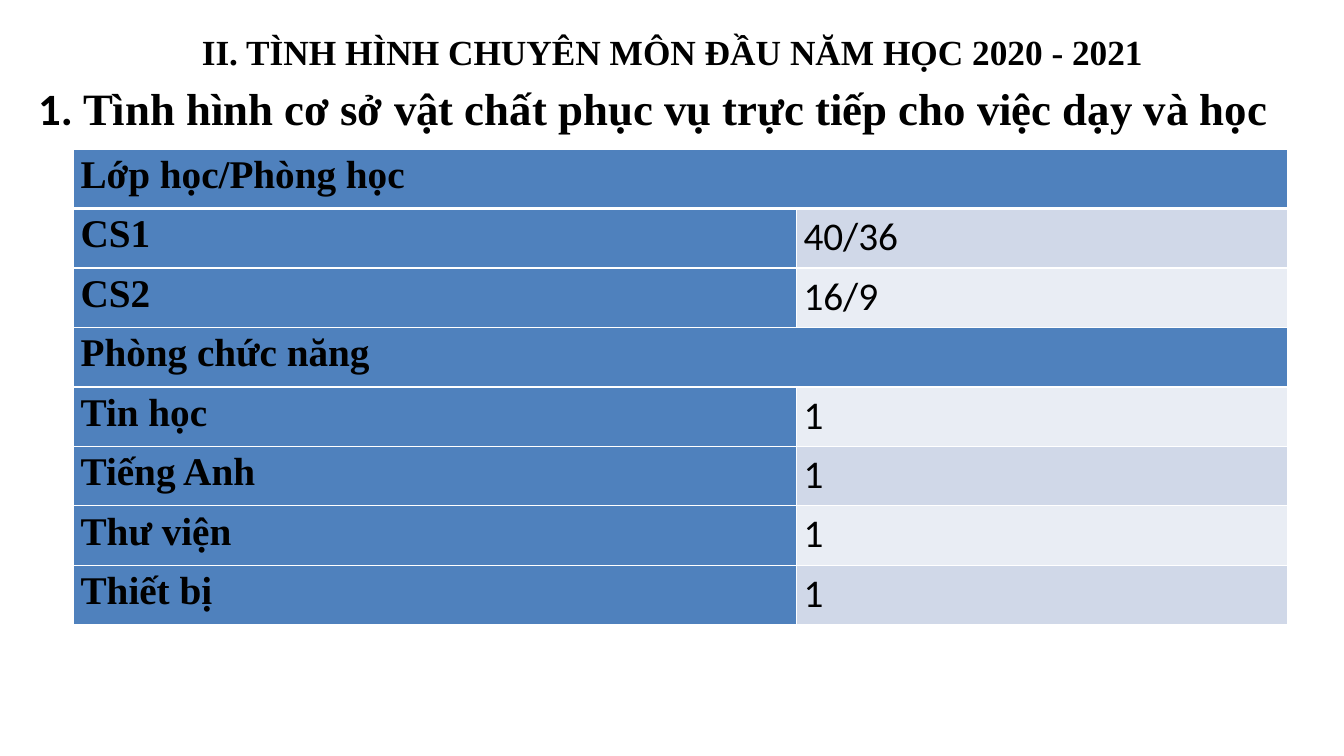
from dataclasses import dataclass

from lxml.etree import SubElement
from pptx import Presentation
from pptx.dml.color import RGBColor as RGB
from pptx.enum.text import MSO_ANCHOR as Anchor, MSO_AUTO_SIZE as Fit, PP_ALIGN as Align
from pptx.oxml.ns import qn
from pptx.util import Emu, Pt

SCALE = 9144  # EMU in one px, at 100 px to the inch


@dataclass(frozen=True)
class Theme:
    ink: str = "000000"
    head: str = "4F81BD"
    dark: str = "D0D8E8"
    light: str = "E9EDF4"
    rule: str = "FFFFFF"
    serif: str = "Times New Roman"
    sans: str = "Calibri"
    title: float = 25.2
    lead: float = 32
    body: float = 28
    thin: float = 1
    thick: float = 3


@dataclass(frozen=True)
class Row:
    """A row with no value spans both columns."""
    label: str
    value: str = ""


THEME = Theme()
ROWS = [
    Row("Lớp học/Phòng học"),
    Row("CS1", "40/36"),
    Row("CS2", "16/9"),
    Row("Phòng chức năng"),
    Row("Tin học", "1"),
    Row("Tiếng Anh", "1"),
    Row("Thư viện", "1"),
    Row("Thiết bị", "1"),
]
WIDTHS = (717, 487)
HEIGHT = 59


def px(count: int) -> Emu:
    return Emu(count * SCALE)


def assign(item, values: dict) -> None:
    for name, value in values.items():
        setattr(item, name, value)


def place(shape, left: int, top: int, width: int, height: int) -> None:
    assign(shape, {"left": px(left), "top": px(top),
                   "width": px(width), "height": px(height)})


def write(para, text: str, size: float, face: str, bold: bool = True) -> None:
    run = para.add_run()
    run.text = text
    assign(run.font, {"size": Pt(size), "name": face, "bold": bold})
    run.font.color.rgb = RGB.from_string(THEME.ink)


def edge(cell, top: float, bottom: float) -> None:
    """Draw the four borders of a cell; top and bottom are in points."""
    props = cell._tc.get_or_add_tcPr()
    sides = {"L": THEME.thin, "R": THEME.thin, "T": top, "B": bottom}
    for side, width in sides.items():
        line = SubElement(props, qn(f"a:ln{side}"), w=str(Pt(width)))
        fill = SubElement(line, qn("a:solidFill"))
        SubElement(fill, qn("a:srgbClr"), val=THEME.rule)


def paint(cell, fill: str, index: int) -> None:
    edge(cell, THEME.thick if index == 1 else THEME.thin,
         THEME.thick if index == 0 else THEME.thin)
    cell.fill.solid()
    cell.fill.fore_color.rgb = RGB.from_string(fill)
    assign(cell, {"margin_left": px(7), "margin_right": px(7),
                  "margin_top": 0, "margin_bottom": 0})


def enter(cell, text: str, face: str, bold: bool) -> None:
    para = cell.text_frame.paragraphs[0]
    assign(para, {"alignment": Align.JUSTIFY, "line_spacing": 1.1,
                  "space_before": Pt(4.8), "space_after": Pt(4.8)})
    write(para, text, THEME.body, face, bold)


def add_title(slide) -> None:
    title = slide.shapes.title
    place(title, 67, 30, 1200, 77)
    frame = title.text_frame
    assign(frame, {"auto_size": Fit.NONE, "word_wrap": True,
                   "vertical_anchor": Anchor.TOP, "margin_top": 0})
    para = frame.paragraphs[0]
    para.alignment = Align.CENTER
    write(para, "II. TÌNH HÌNH CHUYÊN MÔN ĐẦU NĂM HỌC 2020 - 2021",
          THEME.title, THEME.serif)


def add_lead(slide) -> None:
    box = slide.shapes.add_textbox(0, 0, 0, 0)
    place(box, 28, 75, 1282, 595)
    box.text_frame.word_wrap = True
    para = box.text_frame.paragraphs[0]
    write(para, "1. ", THEME.lead, THEME.sans)
    write(para, "Tình hình cơ sở vật chất phục vụ trực tiếp cho việc dạy và học",
          THEME.lead, THEME.serif)


def add_rooms(slide) -> None:
    table = slide.shapes.add_table(
        len(ROWS), len(WIDTHS), px(73), px(148),
        px(sum(WIDTHS)), px(HEIGHT * len(ROWS))).table
    for column, width in zip(table.columns, WIDTHS):
        column.width = px(width)
    for index, row in enumerate(ROWS):
        table.rows[index].height = px(HEIGHT)
        label, value = table.cell(index, 0), table.cell(index, 1)
        band = THEME.dark if index % 2 else THEME.light
        paint(label, THEME.head, index)
        paint(value, band if row.value else THEME.head, index)
        enter(label, row.label, THEME.serif, True)
        if row.value:
            enter(value, row.value, THEME.sans, False)
        else:
            label.merge(value)


def main() -> None:
    deck = Presentation()
    assign(deck, {"slide_width": px(1333), "slide_height": px(750)})
    slide = deck.slides.add_slide(deck.slide_layouts.get_by_name("Title Only"))
    add_title(slide)
    add_lead(slide)
    add_rooms(slide)
    deck.save("out.pptx")


if __name__ == "__main__":
    main()
